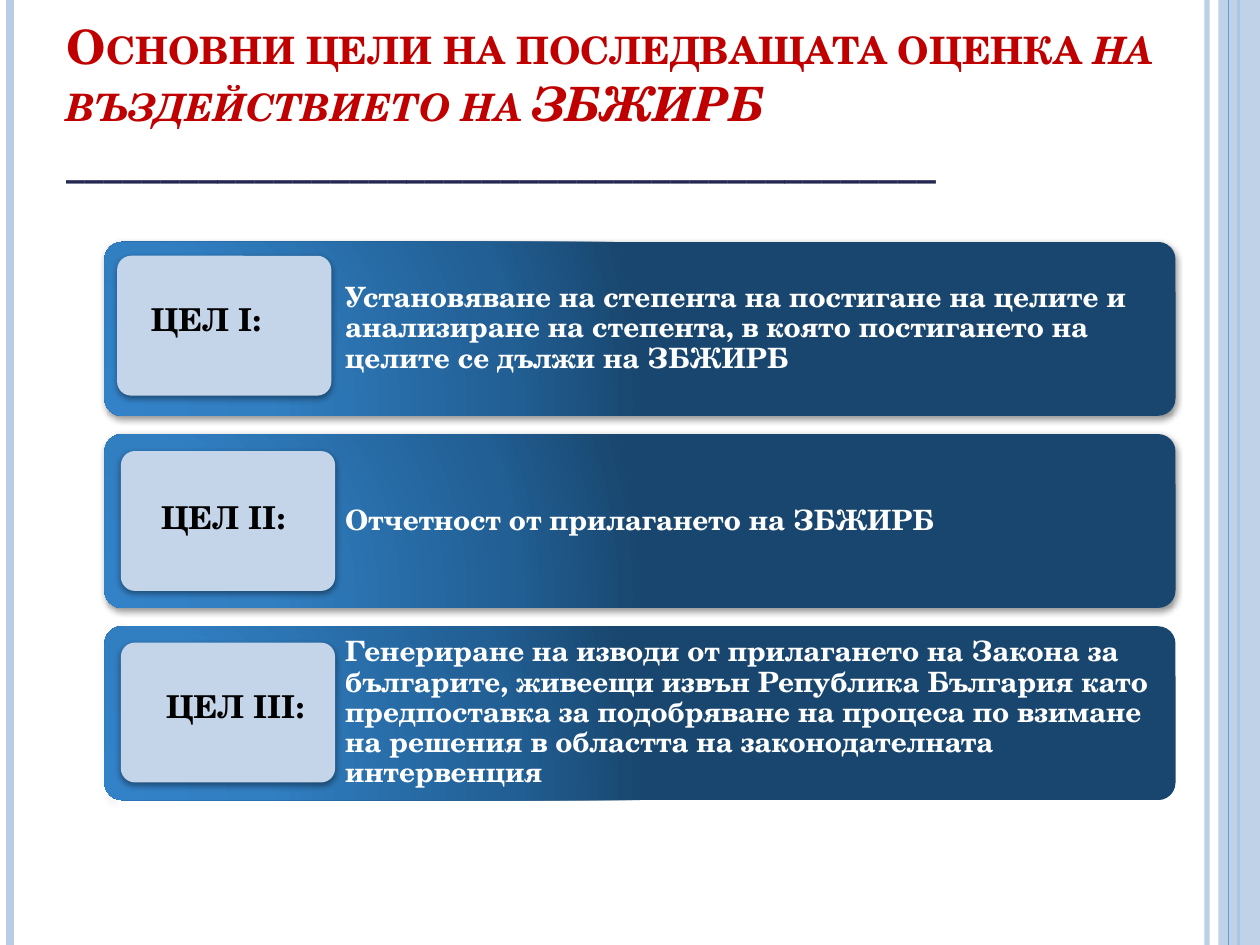
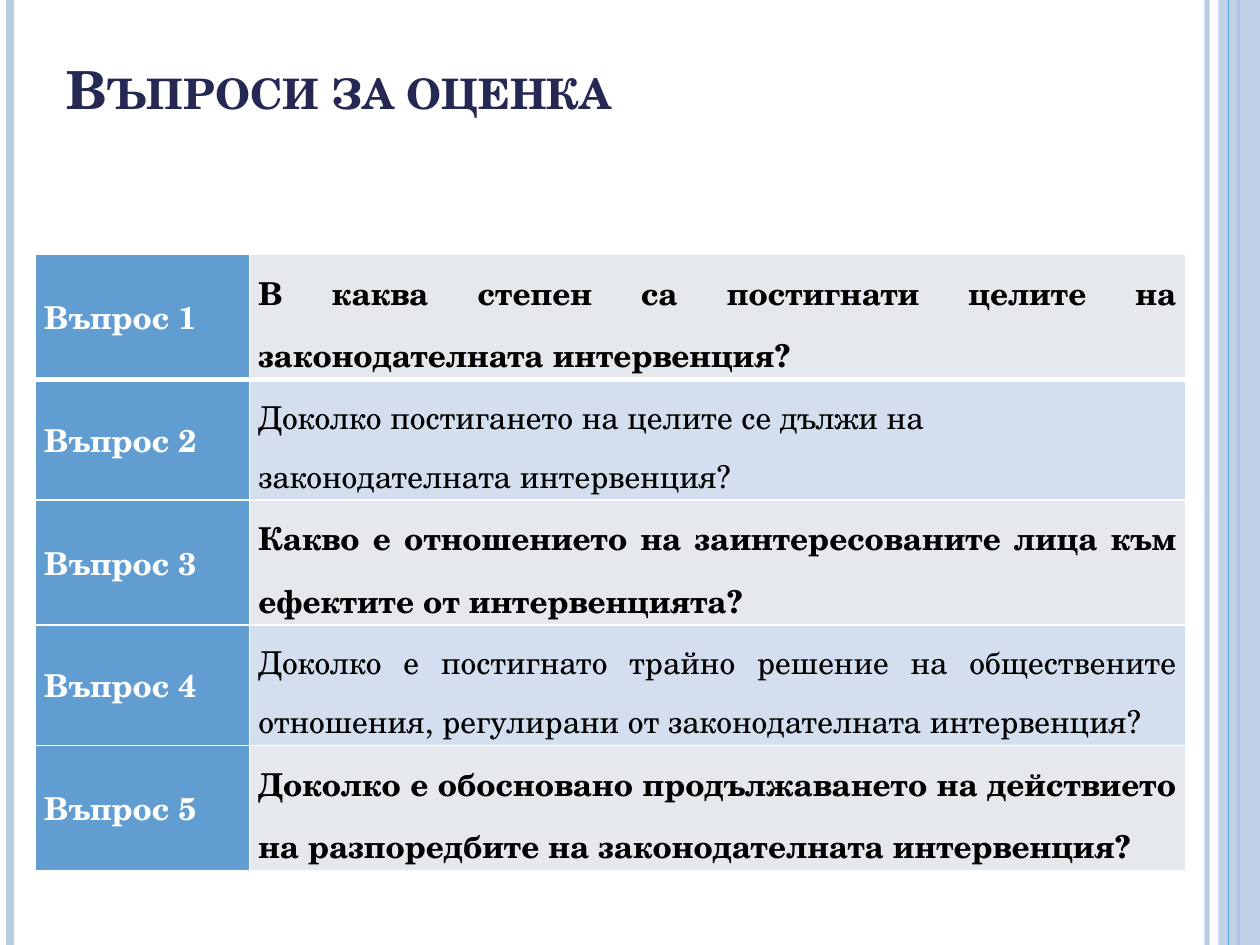
from lxml import etree
from pptx import Presentation
from pptx.dml.color import RGBColor
from pptx.enum.shapes import MSO_CONNECTOR, MSO_SHAPE
from pptx.enum.text import MSO_ANCHOR, MSO_AUTO_SIZE, PP_ALIGN
from pptx.oxml import parse_xml
from pptx.oxml.ns import nsdecls, qn
from pptx.util import Inches, Pt

FONT = "TeX Gyre Schola"
WIDTH, HEIGHT = 10, 7.5

WHITE = RGBColor(0xFF, 0xFF, 0xFF)
BLACK = RGBColor(0x00, 0x00, 0x00)
RED = RGBColor(0xC0, 0x00, 0x00)
NAVY = RGBColor(0x24, 0x28, 0x52)
BLUE = RGBColor(0x62, 0x9D, 0xD1)
BAND_BLUE = RGBColor(0xB7, 0xCC, 0xE5)
LABEL_BLUE = RGBColor(0xC5, 0xD5, 0xE9)
ROW_GREY = RGBColor(0xE5, 0xE9, 0xEE)
ROW_BLUE = RGBColor(0xD3, 0xDF, 0xEE)
BAR_STOPS = [
    (0, RGBColor(0x33, 0x82, 0xC8)),
    (30, RGBColor(0x31, 0x7E, 0xC1)),
    (75, RGBColor(0x21, 0x5F, 0x94)),
    (100, RGBColor(0x19, 0x46, 0x6E)),
]

BAR_LEFT, BAR_TOP, BAR_WIDTH, BAR_HEIGHT = 0.83, 1.92, 8.5, 1.38
BAR_PITCH = 1.525
TEXT_LEFT, TEXT_WIDTH = 2.67, 6.67
LABEL_WIDTH, LABEL_HEIGHT = 1.7, 1.11

# label, label text (left, top), label box (left, top), goal
GOALS = [
    ("ЦЕЛ І:", (1.1, 2.33), (0.93, 2.03),
     "Установяване на степента на постигане на целите и анализиране на "
     "степента, в която постигането на целите се дължи на ЗБЖИРБ"),
    ("ЦЕЛ ІІ:", (1.18, 3.9), (0.96, 3.58),
     "Отчетност от прилагането на ЗБЖИРБ"),
    ("ЦЕЛ ІІІ:", (1.22, 5.4), (0.96, 5.1),
     "Генериране на изводи от прилагането на Закона за българите, живеещи "
     "извън Република България като предпоставка за подобряване на процеса "
     "по взимане на решения в областта на законодателната интервенция"),
]

QUESTIONS = [
    ("В каква степен са постигнати целите на законодателната интервенция?",
     PP_ALIGN.JUSTIFY),
    ("Доколко постигането на целите се дължи на законодателната интервенция?",
     PP_ALIGN.LEFT),
    ("Какво е отношението на заинтересованите лица към ефектите от "
     "интервенцията?", PP_ALIGN.JUSTIFY),
    ("Доколко е постигнато трайно решение на обществените отношения, "
     "регулирани от законодателната интервенция?", PP_ALIGN.JUSTIFY),
    ("Доколко е обосновано продължаването на действието на разпоредбите на "
     "законодателната интервенция?", PP_ALIGN.JUSTIFY),
]


def inches(*lengths):
    return [Inches(length) for length in lengths]


def add_run(p, text, size, color, bold=True, italic=False, small_caps=False):
    r = p.add_run()
    r.text = text
    r.font.name, r.font.size = FONT, Pt(size)
    r.font.bold, r.font.italic = bold, italic
    r.font.color.rgb = color
    if small_caps:
        r.font._element.set("cap", "small")


def set_alpha(color_parent, percent):
    color = next(color_parent.iter(qn("a:srgbClr")))
    etree.SubElement(color, qn("a:alpha")).set("val", str(percent * 1000))


def add_rule(s, x, color, width, alpha=None):
    """Vertical line over the full slide height."""
    line = s.shapes.add_connector(
        MSO_CONNECTOR.STRAIGHT, *inches(x, 0, x, HEIGHT))
    line.line.color.rgb = color
    line.line.width = Pt(width)
    etree.SubElement(line.element.spPr, qn("a:effectLst"))
    if alpha:
        set_alpha(line.element.spPr, alpha)
    return line


def add_box(s, kind, box, color=None):
    shape = s.shapes.add_shape(kind, *inches(*box))
    shape.shadow.inherit = False
    shape.line.fill.background()
    if color is not None:
        shape.fill.solid()
        shape.fill.fore_color.rgb = color
    return shape


def decorate_master(prs, s):
    """Draw the side bands once and move them to the slide master."""
    band = add_box(s, MSO_SHAPE.RECTANGLE, (9.67, 0, WIDTH - 9.67, HEIGHT),
                   BAND_BLUE)
    set_alpha(band.element.spPr, 87)
    parts = [
        add_rule(s, 9.58, BAND_BLUE, 3, alpha=93),
        add_rule(s, 0.08, BAND_BLUE, 4.5),
        add_rule(s, 9.83, BLUE, 1.5),
        band,
        add_rule(s, 9.75, BLUE, 0.75),
    ]
    tree = prs.slide_master.shapes.element
    for i, part in enumerate(parts):
        tree.insert(2 + i, part.element)


def set_title(s, box, runs, size):
    title = s.shapes.title
    title.left, title.top, title.width, title.height = inches(*box)
    tf = title.text_frame
    tf.auto_size = MSO_AUTO_SIZE.NONE
    tf.vertical_anchor = MSO_ANCHOR.BOTTOM
    p = tf.paragraphs[0]
    p.alignment = PP_ALIGN.LEFT
    for text, color, italic, breaks in runs:
        add_run(p, text, size, color, italic=italic, small_caps=True)
        if breaks:
            p.add_line_break()


def add_text(s, box, text, size, color, inset=None, wrap=True,
             anchor=MSO_ANCHOR.TOP, spacing=1.0):
    tf = s.shapes.add_textbox(*inches(*box)).text_frame
    tf.word_wrap = wrap
    tf.vertical_anchor = anchor
    if inset is not None:
        tf.margin_left = tf.margin_right = Inches(inset)
        tf.margin_top = tf.margin_bottom = Inches(inset)
    p = tf.paragraphs[0]
    p.line_spacing = spacing
    add_run(p, text, size, color)


def add_rounded(s, box, color=None):
    """Rounded rectangle with a soft shadow below it."""
    shape = add_box(s, MSO_SHAPE.ROUNDED_RECTANGLE, box, color)
    shape.adjustments[0] = 0.1
    effects = shape.element.spPr.find(qn("a:effectLst"))
    effects.append(parse_xml(
        f'<a:outerShdw {nsdecls("a")} blurRad="{Pt(4)}" dist="{Pt(1.6)}" '
        'dir="5400000" rotWithShape="0"><a:srgbClr val="000000">'
        '<a:alpha val="42000"/></a:srgbClr></a:outerShdw>'))
    return shape


def fill_radial(shape, stops):
    shape.fill.background()
    stop_xml = "".join(
        f'<a:gs pos="{pos * 1000}"><a:srgbClr val="{color}"/></a:gs>'
        for pos, color in stops)
    gradient = parse_xml(
        f'<a:gradFill {nsdecls("a")} rotWithShape="1">'
        f'<a:gsLst>{stop_xml}</a:gsLst><a:path path="circle">'
        '<a:fillToRect l="5000" t="100000" r="120000" b="10000"/>'
        '</a:path></a:gradFill>')
    spPr = shape.element.spPr
    spPr.replace(spPr.find(qn("a:noFill")), gradient)


def add_goal_bar(s, row, label_box, goal):
    top = BAR_TOP + row * BAR_PITCH
    fill_radial(add_rounded(s, (BAR_LEFT, top, BAR_WIDTH, BAR_HEIGHT)),
                BAR_STOPS)
    add_text(s, (TEXT_LEFT, top, TEXT_WIDTH, BAR_HEIGHT), goal, 16, WHITE,
             inset=0.07, anchor=MSO_ANCHOR.MIDDLE, spacing=0.9)
    add_rounded(s, (*label_box, LABEL_WIDTH, LABEL_HEIGHT), LABEL_BLUE)


def set_borders(cell, top, bottom):
    tcPr = cell._tc.get_or_add_tcPr()
    for side, width in (("L", 1), ("R", 1), ("T", top), ("B", bottom)):
        tcPr.append(parse_xml(
            f'<a:ln{side} {nsdecls("a")} w="{Pt(width)}"><a:solidFill>'
            f'<a:srgbClr val="{WHITE}"/></a:solidFill></a:ln{side}>'))


def fill_cell(cell, text, fill, color, bold=True, align=PP_ALIGN.LEFT,
              spacing=1.0):
    cell.fill.solid()
    cell.fill.fore_color.rgb = fill
    cell.vertical_anchor = MSO_ANCHOR.MIDDLE
    cell.margin_left = cell.margin_right = Inches(0.07)
    cell.margin_top = cell.margin_bottom = 0
    p = cell.text_frame.paragraphs[0]
    p.alignment, p.line_spacing = align, spacing
    p.space_before = p.space_after = Pt(6)
    add_run(p, text, 18, color, bold=bold)


def add_question_table(s, box, first_column):
    left, top, width, height = box
    table = s.shapes.add_table(len(QUESTIONS), 2, *inches(*box)).table
    table.first_row = table.horz_banding = False
    table.columns[0].width = Inches(first_column)
    table.columns[1].width = Inches(width - first_column)
    for i, (question, align) in enumerate(QUESTIONS):
        name, body = table.cell(i, 0), table.cell(i, 1)
        for cell in (name, body):
            set_borders(cell, top=3 if i == 1 else 1,
                        bottom=3 if i == 0 else 1)
        odd = i % 2 == 0
        fill_cell(name, f"Въпрос {i + 1}", BLUE, WHITE)
        fill_cell(body, question, ROW_GREY if odd else ROW_BLUE, BLACK,
                  bold=odd, align=align, spacing=1.28)


def build_goals(s):
    set_title(s, (0.43, 0.29, 8.83, 1.25), [
        ("Основни цели на последващата оценка ", RED, False, False),
        ("на въздействието на ЗБЖИРБ", RED, True, True),
        ("_" * 46, NAVY, False, False),
    ], 27)
    for row, (_, _, label_box, goal) in enumerate(GOALS):
        add_goal_bar(s, row, label_box, goal)
    for label, place, _, _ in GOALS:
        add_text(s, (*place, 1.34, 0.4), label, 18, BLACK, wrap=False)


def build_questions(s):
    set_title(s, (0.43, 0.29, 8.17, 0.71),
              [("Въпроси за оценка", NAVY, False, False)], 30)
    add_question_table(s, (0.28, 2.02, 9.13, 4.8), first_column=1.7)


def main():
    prs = Presentation()
    prs.slide_width, prs.slide_height = inches(WIDTH, HEIGHT)
    title_only = prs.slide_layouts[5]
    goals = prs.slides.add_slide(title_only)
    decorate_master(prs, goals)
    build_goals(goals)
    build_questions(prs.slides.add_slide(title_only))
    prs.save("out.pptx")


if __name__ == "__main__":
    main()
